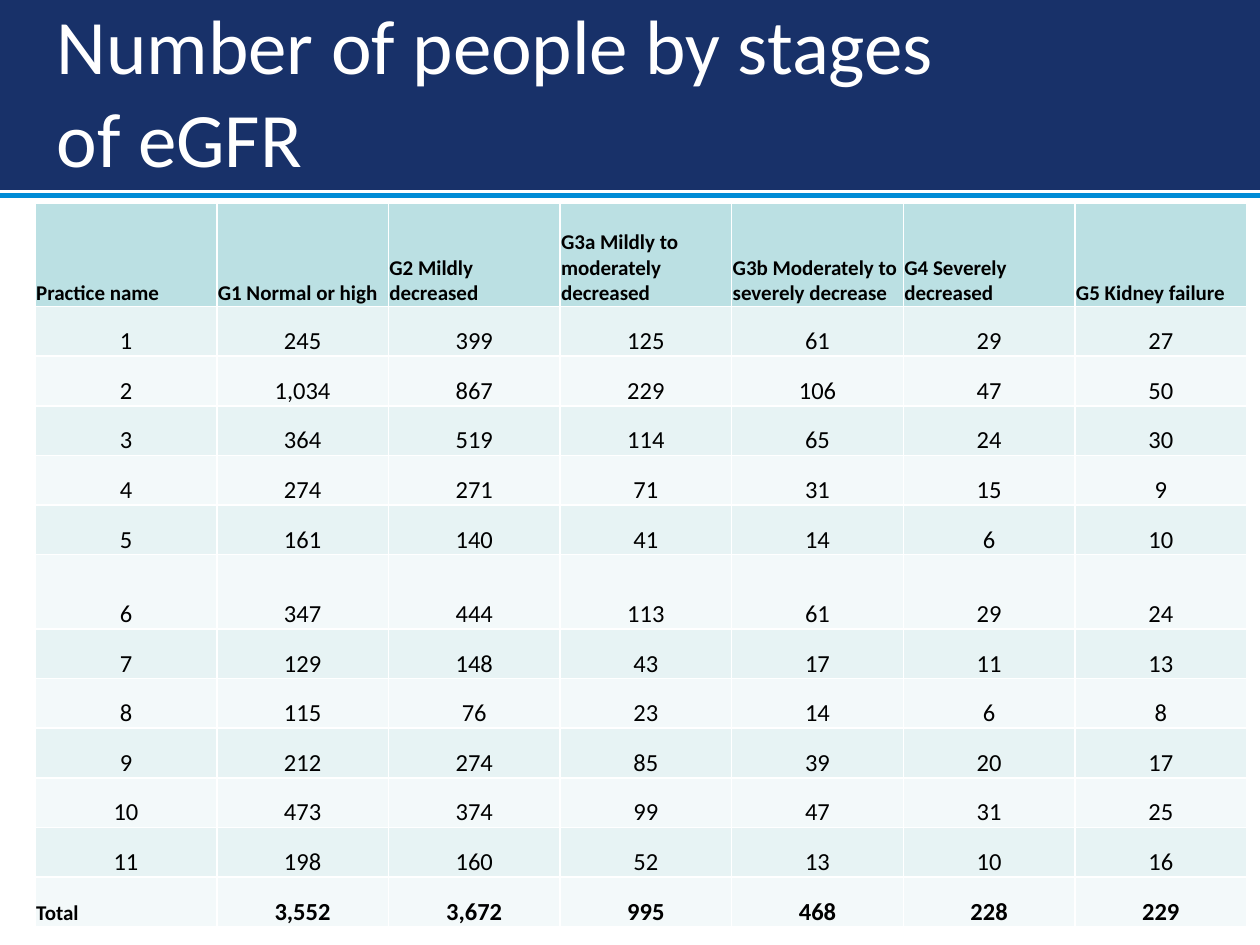
from pptx import Presentation
from pptx.dml.color import RGBColor
from pptx.enum.shapes import MSO_CONNECTOR, MSO_SHAPE
from pptx.enum.text import MSO_ANCHOR as Anchor, MSO_AUTO_SIZE, PP_ALIGN as Align
from pptx.oxml.xmlchemy import OxmlElement
from pptx.util import Cm, Pt

NAVY = RGBColor(0x18, 0x31, 0x69)
BRIGHT_BLUE = RGBColor(0x00, 0x8C, 0xD6)
WHITE = RGBColor(0xFF, 0xFF, 0xFF)
BLACK = RGBColor(0x00, 0x00, 0x00)
HEADER_TEAL = RGBColor(0xBB, 0xE0, 0xE3)
BAND_DARK = RGBColor(0xE7, 0xF3, 0xF4)
BAND_LIGHT = RGBColor(0xF3, 0xF9, 0xFA)

TITLE_FONT = {"name": "Calibri", "size": Pt(44), "bold": False}
LABEL_FONT = {"name": "Calibri", "size": Pt(12), "bold": True}
COUNT_FONT = {"name": "Calibri", "size": Pt(14), "bold": False}
TOTAL_FONT = {**COUNT_FONT, "bold": True}
TITLE_BOX = {"left": Cm(0.89), "top": Cm(0.71), "width": Cm(19), "height": Cm(2.21)}
TITLE_FRAME = {"vertical_anchor": Anchor.MIDDLE, "word_wrap": True,
               "auto_size": MSO_AUTO_SIZE.NONE}
CELL_FORMAT = {"vertical_anchor": Anchor.BOTTOM, "margin_left": Cm(0.02),
               "margin_top": Cm(0.02), "margin_right": Cm(0.02), "margin_bottom": 0}

HEADERS = ["Practice name", "G1 Normal or high", "G2 Mildly decreased",
           "G3a Mildly to moderately decreased", "G3b Moderately to severely decrease",
           "G4 Severely decreased", "G5 Kidney failure"]
PRACTICE_COUNTS = [
    [245, 399, 125, 61, 29, 27],
    [1034, 867, 229, 106, 47, 50],
    [364, 519, 114, 65, 24, 30],
    [274, 271, 71, 31, 15, 9],
    [161, 140, 41, 14, 6, 10],
    [347, 444, 113, 61, 29, 24],
    [129, 148, 43, 17, 11, 13],
    [115, 76, 23, 14, 6, 8],
    [212, 274, 85, 39, 20, 17],
    [473, 374, 99, 47, 31, 25],
    [198, 160, 52, 13, 10, 16],
]
TOTALS = [3552, 3672, 995, 468, 228, 229]
TALL_ROWS = {0: Cm(2.08), 6: Cm(1.5)}


def apply_format(target, values):
    """Set each named attribute of the target."""
    for name, value in values.items():
        setattr(target, name, value)


def format_text(paragraph, font_values, color, alignment):
    """Style a whole paragraph."""
    paragraph.alignment = alignment
    apply_format(paragraph.font, font_values)
    paragraph.font.color.rgb = color


def add_banner(slide, width):
    """Draw the rule and the filled band behind the title."""
    rule = slide.shapes.add_connector(MSO_CONNECTOR.STRAIGHT, 0, Cm(3.94), width, Cm(3.94))
    rule._element.spPr.append(OxmlElement("a:effectLst"))
    band = slide.shapes.add_shape(MSO_SHAPE.RECTANGLE, 0, 0, width, Cm(3.78))
    band.shadow.inherit = False
    band.fill.solid()
    band.fill.fore_color.rgb = NAVY
    for shape, color in ((rule, BRIGHT_BLUE), (band, NAVY)):
        shape.line.color.rgb = color
        shape.line.width = Pt(3)


def set_title(slide, text):
    """Fill the title placeholder and bring it in front of the banner."""
    title = slide.shapes.title
    apply_format(title, TITLE_BOX)
    apply_format(title.text_frame, TITLE_FRAME)
    title.text_frame.text = text
    format_text(title.text_frame.paragraphs[0], TITLE_FONT, WHITE, Align.LEFT)
    slide.shapes._spTree.append(title._element)


def fill_cell(cell, text, font_values, fill, alignment):
    """Write and style one table cell."""
    apply_format(cell, CELL_FORMAT)
    cell.fill.solid()
    cell.fill.fore_color.rgb = fill
    cell.text = text
    format_text(cell.text_frame.paragraphs[0], font_values, BLACK, alignment)


def fill_row(table, index, texts, lead_font, font_values, fill, lead_align, alignment):
    """Write one row whose leading cell has its own style."""
    for column, text in enumerate(texts):
        style = (font_values, fill, alignment) if column else (lead_font, fill, lead_align)
        fill_cell(table.cell(index, column), text, *style)


def add_stage_table(slide):
    """Build the table of counts per practice and stage."""
    row_count = len(PRACTICE_COUNTS) + 2
    heights = [TALL_ROWS.get(index, Cm(1)) for index in range(row_count)]
    widths = [Cm(3.66)] + [Cm(3.46)] * (len(HEADERS) - 1)
    table = slide.shapes.add_table(row_count, len(HEADERS), Cm(0.71), Cm(4.1),
                                   sum(widths), sum(heights)).table
    table.horz_banding = False
    for row, height in zip(table.rows, heights):
        row.height = height
    for column, width in zip(table.columns, widths):
        column.width = width

    fill_row(table, 0, HEADERS, LABEL_FONT, LABEL_FONT, HEADER_TEAL, Align.LEFT, Align.LEFT)
    for practice, counts in enumerate(PRACTICE_COUNTS, start=1):
        texts = [str(practice)] + [f"{count:,}" for count in counts]
        fill = BAND_DARK if practice % 2 else BAND_LIGHT
        fill_row(table, practice, texts, COUNT_FONT, COUNT_FONT, fill,
                 Align.CENTER, Align.CENTER)
    totals = ["Total"] + [f"{total:,}" for total in TOTALS]
    fill_row(table, row_count - 1, totals, LABEL_FONT, TOTAL_FONT, BAND_LIGHT,
             Align.LEFT, Align.CENTER)


def main():
    """Create and save the presentation."""
    presentation = Presentation()
    presentation.slide_width = Cm(25.4)
    presentation.slide_height = Cm(19.05)
    slide = presentation.slides.add_slide(presentation.slide_layouts[5])
    add_banner(slide, presentation.slide_width)
    set_title(slide, "Number of people by stages of eGFR")
    add_stage_table(slide)
    presentation.save("out.pptx")


if __name__ == "__main__":
    main()
